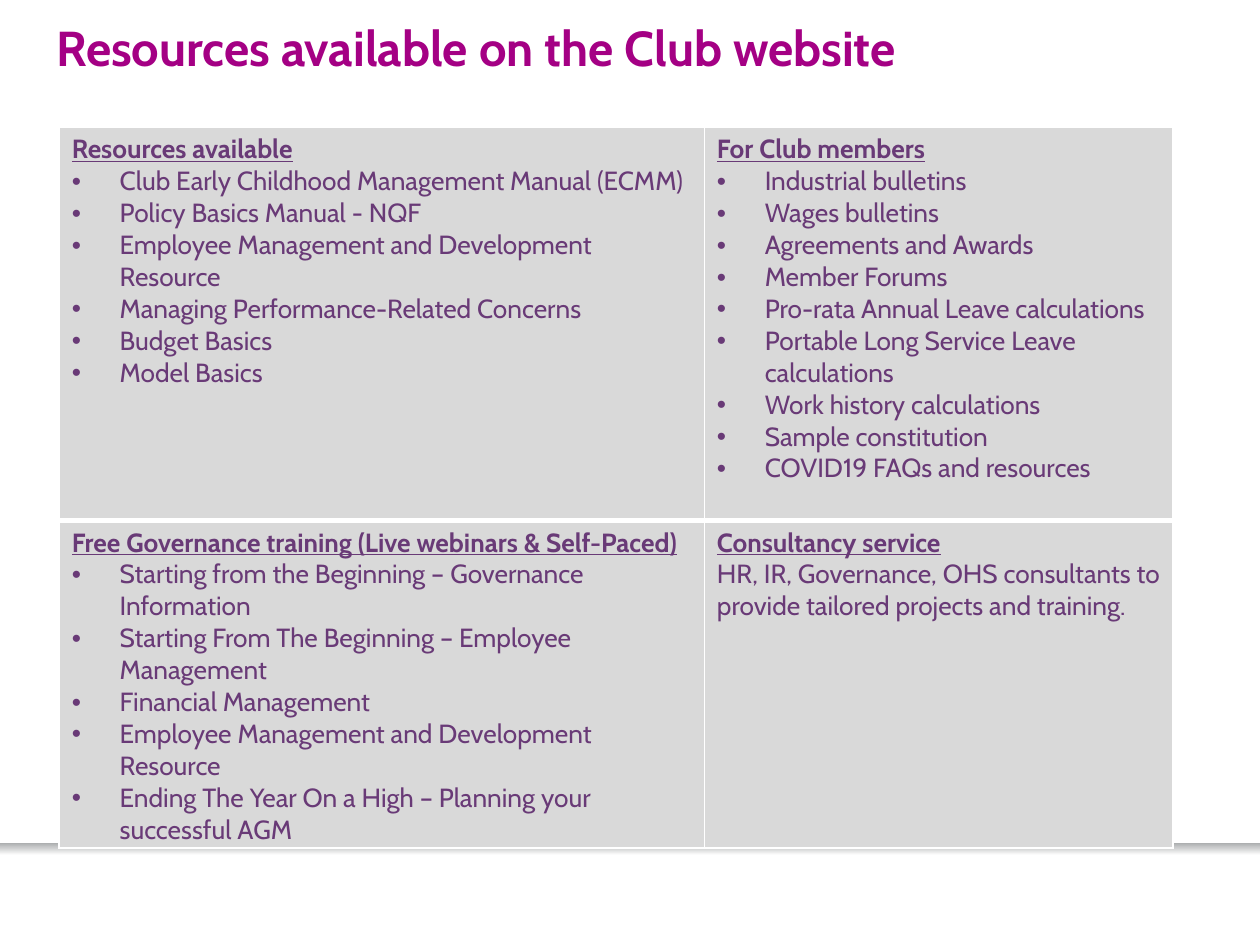
from lxml import etree
from pptx import Presentation
from pptx.dml.color import RGBColor
from pptx.enum.shapes import MSO_SHAPE
from pptx.enum.text import MSO_ANCHOR
from pptx.oxml.ns import qn
from pptx.util import Inches, Pt

RECTANGLE = MSO_SHAPE.RECTANGLE
MIDDLE = MSO_ANCHOR.MIDDLE

TITLE = "Resources available on the Club website"
SECTIONS = [
    [
        {"heading": "Resources available", "bullets": [
            "Club Early Childhood Management Manual (ECMM)",
            "Policy Basics Manual - NQF",
            "Employee Management and Development Resource",
            "Managing Performance-Related Concerns",
            "Budget Basics",
            "Model Basics",
        ]},
        {"heading": "For Club members", "bullets": [
            "Industrial bulletins",
            "Wages bulletins",
            "Agreements and Awards",
            "Member Forums",
            "Pro-rata Annual Leave calculations",
            "Portable Long Service Leave calculations",
            "Work history calculations",
            "Sample constitution",
            "COVID19 FAQs and resources",
        ]},
    ],
    [
        {"heading": "Free Governance training (Live webinars & Self-Paced)", "bullets": [
            "Starting from the Beginning – Governance Information",
            "Starting From The Beginning – Employee Management",
            "Financial Management",
            "Employee Management and Development Resource",
            "Ending The Year On a High – Planning your successful AGM",
        ]},
        {"heading": "Consultancy service", "body":
            "HR, IR, Governance, OHS consultants to provide tailored projects and training."},
    ],
]
COLUMN_WIDTHS = [5.12, 3.72]
ROW_HEIGHTS = [3.12, 2.41]
BULLET_INDENT = Inches(0.38)

THEME = {
    "font": "Cabin",
    "title": "A40084",
    "text": "693A77",
    "cell": "D9D9D9",
    "border": "FFFFFF",
    "footer": [("ABADAE", 0), ("FFFFFF", 0.12)],
    "title_size": 28,
    "text_size": 15,
    "thin": 1,
    "thick": 3,
}


def style(paragraph, size, color, bold=False, underline=False):
    font = paragraph.font
    font.name = THEME["font"]
    font.size = Pt(size)
    font.bold = bold
    font.underline = underline
    font.color.rgb = RGBColor.from_string(color)


def add_bullet(paragraph):
    properties = paragraph._p.get_or_add_pPr()
    properties.set("marL", str(BULLET_INDENT))
    properties.set("indent", str(-BULLET_INDENT))
    etree.SubElement(properties, qn("a:buFont"), typeface="Arial")
    etree.SubElement(properties, qn("a:buChar"), char="•")


def add_borders(cell, widths):
    properties = cell._tc.get_or_add_tcPr()
    for side, width in widths.items():
        border = etree.SubElement(properties, qn(f"a:ln{side}"), w=str(Pt(width)))
        fill = etree.SubElement(border, qn("a:solidFill"))
        etree.SubElement(fill, qn("a:srgbClr"), val=THEME["border"])


def fill_section(cell, section):
    frame = cell.text_frame
    heading = frame.paragraphs[0]
    heading.text = section["heading"]
    style(heading, THEME["text_size"], THEME["text"], bold=True, underline=True)
    bullets = section.get("bullets", [])
    for line in bullets or [section["body"]]:
        paragraph = frame.add_paragraph()
        paragraph.text = line
        if bullets:
            add_bullet(paragraph)
        style(paragraph, THEME["text_size"], THEME["text"])


def add_footer(slide):
    footer = slide.shapes.add_shape(
        RECTANGLE, Inches(0), Inches(6.69), Inches(10), Inches(0.81))
    footer.shadow.inherit = False
    footer.line.fill.background()
    footer.fill.gradient()
    footer.fill.gradient_angle = 270
    for stop, (color, position) in zip(footer.fill.gradient_stops, THEME["footer"]):
        stop.color.rgb = RGBColor.from_string(color)
        stop.position = position


def add_title(slide):
    title = slide.shapes.add_textbox(
        Inches(0.35), Inches(0.02), Inches(9.17), Inches(0.71))
    frame = title.text_frame
    frame.word_wrap = True
    frame.vertical_anchor = MIDDLE
    frame.paragraphs[0].text = TITLE
    style(frame.paragraphs[0], THEME["title_size"], THEME["title"], bold=True)


def add_sections(slide):
    table = slide.shapes.add_table(
        len(SECTIONS), len(COLUMN_WIDTHS), Inches(0.47), Inches(1.01),
        Inches(sum(COLUMN_WIDTHS)), Inches(sum(ROW_HEIGHTS))).table
    table.first_row = False
    table.horz_banding = False
    for column, width in zip(table.columns, COLUMN_WIDTHS):
        column.width = Inches(width)
    thin, thick = THEME["thin"], THEME["thick"]
    for r, sections in enumerate(SECTIONS):
        table.rows[r].height = Inches(ROW_HEIGHTS[r])
        top = thick if r else thin
        bottom = thick if r < len(SECTIONS) - 1 else thin
        for c, section in enumerate(sections):
            cell = table.cell(r, c)
            add_borders(cell, {"L": thin, "R": thin, "T": top, "B": bottom})
            cell.fill.solid()
            cell.fill.fore_color.rgb = RGBColor.from_string(THEME["cell"])
            fill_section(cell, section)


def main():
    deck = Presentation()
    deck.slide_width, deck.slide_height = Inches(10), Inches(7.5)
    slide = deck.slides.add_slide(deck.slide_layouts[6])
    add_footer(slide)
    add_title(slide)
    add_sections(slide)
    deck.save("out.pptx")


if __name__ == "__main__":
    main()
